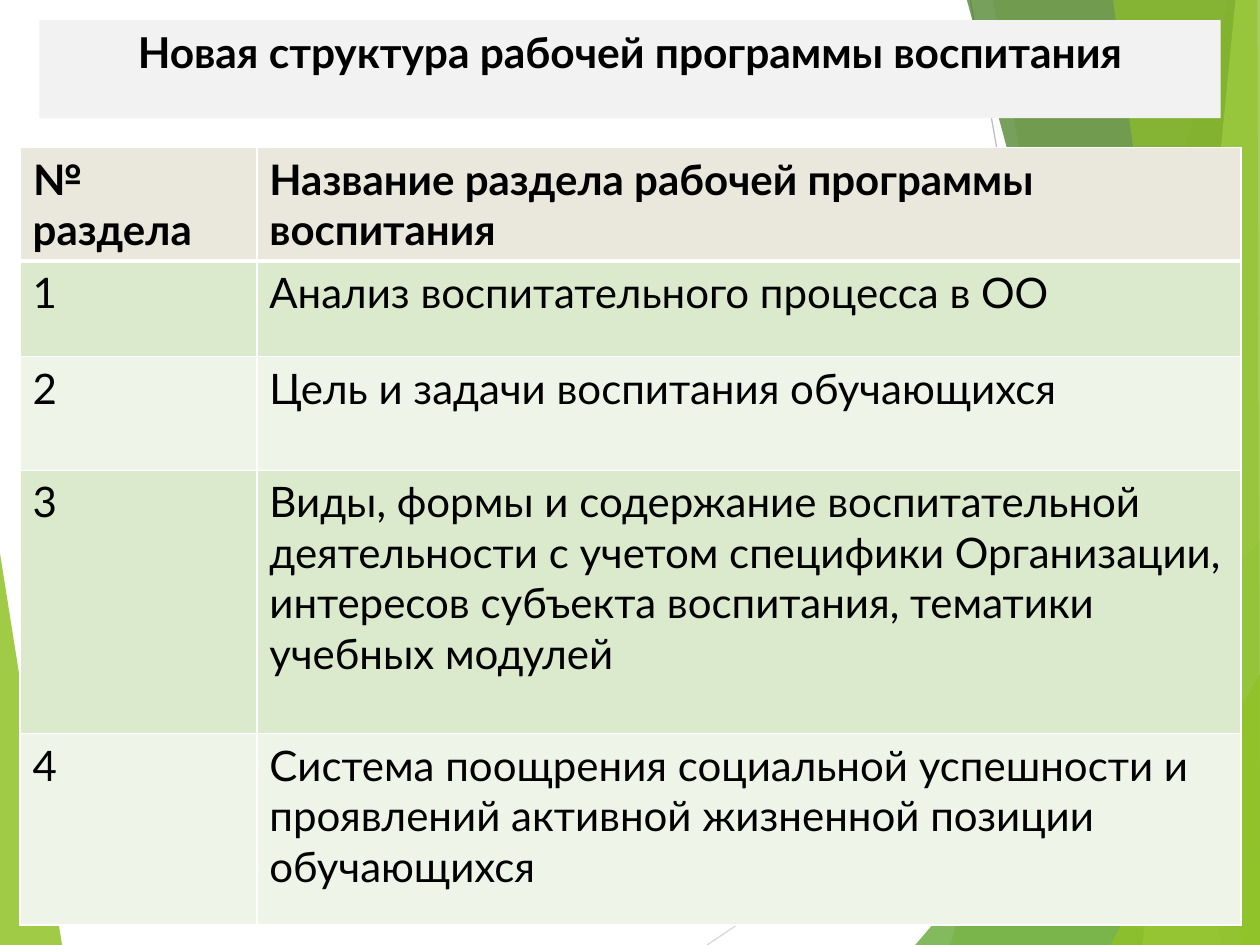
from typing import NamedTuple

from lxml import etree
from pptx import Presentation
from pptx import util as u
from pptx.dml import color, fill as fills
from pptx.enum import shapes, text
from pptx.oxml import ns

FONT = "Lato"
SLIDE_WIDTH, SLIDE_HEIGHT = 720, 540


class Facet(NamedTuple):
    points: list[tuple[float, float]]
    colour: str
    opacity: int


class Ray(NamedTuple):
    start: tuple[float, float]
    end: tuple[float, float]
    colour: str


class Row(NamedTuple):
    number: str
    name: str
    height: float
    colour: str


LEFT_FACET = Facet([(0, 316), (35.5, 540), (0, 540)], "90C226", 85)
RAYS = [
    Ray((404, 540), (720, 329), "D9D9D9"),
    Ray((554.5, 0), (651, 540), "BFBFBF"),
]
RIGHT_FACETS = [
    Facet([(702, 0), (543, 540), (720, 540), (720, 0)], "90C226", 30),
    Facet([(567.5, 0), (662, 540), (720, 540), (720, 0)], "90C226", 20),
    Facet([(523, 540), (720, 309), (720, 540)], "54A021", 72),
    Facet([(552.5, 0), (698.5, 540), (720, 540), (720, 0)], "3F7819", 70),
    Facet([(706, 0), (653, 540), (720, 540), (720, 0)], "C0E474", 70),
    Facet([(636, 0), (710, 540), (720, 540), (718.5, 0)], "90C226", 65),
    Facet([(634.5, 540), (720, 385), (720, 540)], "90C226", 80),
]

HEADER, DARK, LIGHT = "EAE8DC", "DBE9CD", "EEF4E8"
COLUMN_WIDTHS = [135.25, 562.5]
ROWS = [
    Row("№ раздела", "Название раздела рабочей программы воспитания", 65, HEADER),
    Row("1", "Анализ воспитательного процесса в ОО", 54.5, DARK),
    Row("2", "Цель и задачи воспитания обучающихся", 65, LIGHT),
    Row("3", "Виды, формы и содержание воспитательной деятельности с учетом "
        "специфики Организации, интересов субъекта воспитания, тематики "
        "учебных модулей", 150.5, DARK),
    Row("4", "Система поощрения социальной успешности и проявлений активной "
        "жизненной позиции обучающихся", 109.5, LIGHT),
]


def paint(fill: fills.FillFormat, colour: str, opacity: int = 100) -> None:
    fill.solid()
    fill.fore_color.rgb = color.RGBColor.from_string(colour)
    if opacity < 100:
        rgb = fill._xPr.find(".//" + ns.qn("a:srgbClr"))
        etree.SubElement(rgb, ns.qn("a:alpha"), val=str(opacity * 1000))


def style_paragraph(paragraph, size: float, bold: bool) -> None:
    font = paragraph.font
    font.name, font.size, font.bold = FONT, u.Pt(size), bold
    paint(font.fill, "000000")


def draw_facet(slide, facet: Facet) -> None:
    points = [(u.Pt(x), u.Pt(y)) for x, y in facet.points]
    builder = slide.shapes.build_freeform(*points[0])
    builder.add_line_segments(points[1:], close=True)
    shape = builder.convert_to_shape()
    shape.shadow.inherit = False
    shape.line.fill.background()
    paint(shape.fill, facet.colour, facet.opacity)


def draw_ray(slide, ray: Ray) -> None:
    connector = slide.shapes.add_connector(
        shapes.MSO_CONNECTOR.STRAIGHT, *map(u.Pt, ray.start + ray.end))
    paint(connector.line.fill, ray.colour)
    connector.line.width = u.Pt(0.75)
    etree.SubElement(connector._element.spPr, ns.qn("a:effectLst"))


def draw_title(slide) -> None:
    shape = slide.shapes.add_shape(
        shapes.MSO_SHAPE.RECTANGLE, u.Pt(22.5), u.Pt(11.5), u.Pt(675), u.Pt(56))
    shape.shadow.inherit = False
    shape.line.fill.background()
    paint(shape.fill, "F2F2F2")
    frame = shape.text_frame
    frame.word_wrap = True
    frame.vertical_anchor = text.MSO_ANCHOR.TOP
    frame.text = "Новая структура рабочей программы воспитания"
    paragraph = frame.paragraphs[0]
    paragraph.alignment = text.PP_ALIGN.CENTER
    style_paragraph(paragraph, 24.3, True)


def set_borders(cell, widths: dict[str, float]) -> None:
    """Draw white cell borders; the cell fill must be set afterwards."""
    properties = cell._tc.get_or_add_tcPr()
    for side, width in widths.items():
        line = etree.SubElement(properties, ns.qn(f"a:ln{side}"), w=str(u.Pt(width)))
        solid = etree.SubElement(line, ns.qn("a:solidFill"))
        etree.SubElement(solid, ns.qn("a:srgbClr"), val="FFFFFF")


def draw_table(slide) -> None:
    table = slide.shapes.add_table(
        len(ROWS), len(COLUMN_WIDTHS), u.Pt(11.5), u.Pt(84.25),
        u.Pt(sum(COLUMN_WIDTHS)), u.Pt(sum(row.height for row in ROWS))).table
    for column, width in zip(table.columns, COLUMN_WIDTHS):
        column.width = u.Pt(width)
    for index, row in enumerate(ROWS):
        table.rows[index].height = u.Pt(row.height)
        top = 3 if index == 1 else 1
        bottom = 3 if index == 0 else 1
        for cell, content in zip(table.rows[index].cells, (row.number, row.name)):
            cell.text = content
            style_paragraph(cell.text_frame.paragraphs[0], 24, index == 0)
            set_borders(cell, {"L": 1, "R": 1, "T": top, "B": bottom})
            paint(cell.fill, row.colour)


def main() -> None:
    presentation = Presentation()
    presentation.slide_width = u.Pt(SLIDE_WIDTH)
    presentation.slide_height = u.Pt(SLIDE_HEIGHT)
    slide = presentation.slides.add_slide(presentation.slide_layouts[6])
    draw_facet(slide, LEFT_FACET)
    for ray in RAYS:
        draw_ray(slide, ray)
    for facet in RIGHT_FACETS:
        draw_facet(slide, facet)
    draw_title(slide)
    draw_table(slide)
    presentation.save("out.pptx")


if __name__ == "__main__":
    main()
